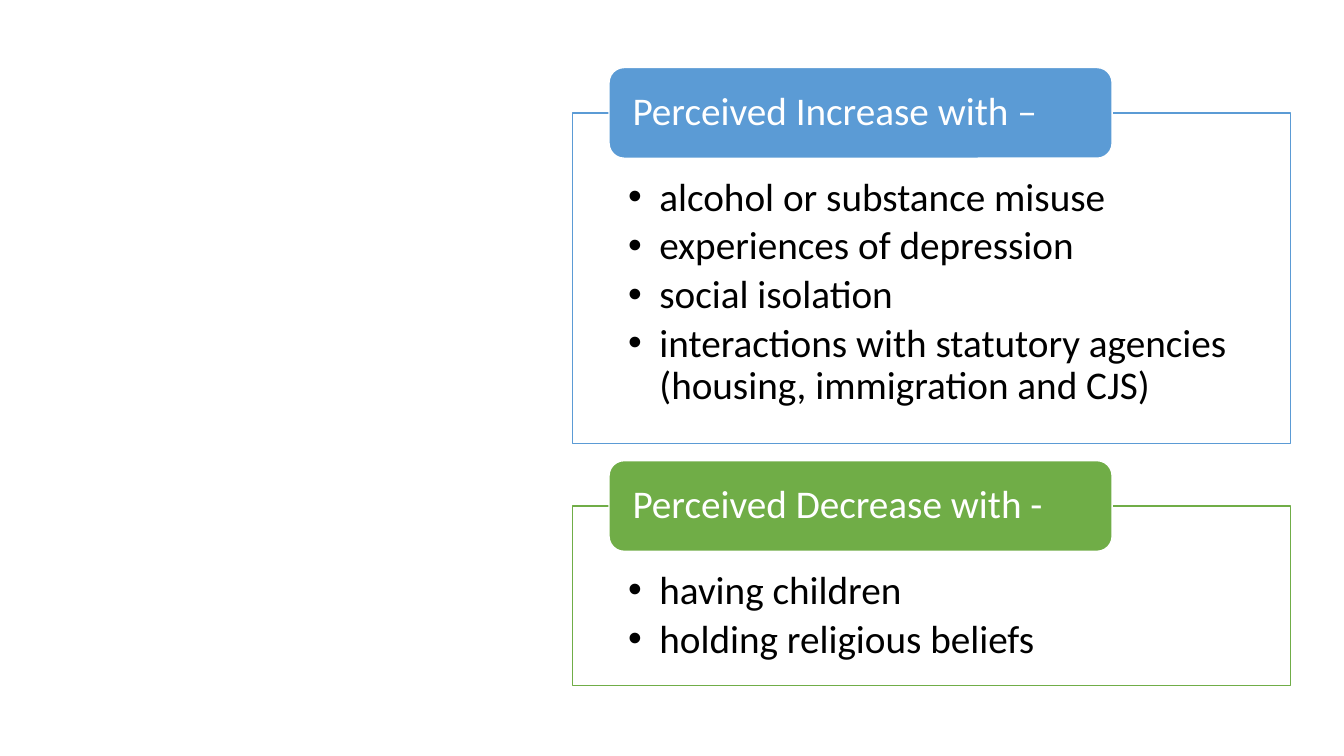
from lxml import etree
from pptx import Presentation
from pptx.dml.color import RGBColor
from pptx.enum.shapes import MSO_SHAPE
from pptx.enum.text import MSO_ANCHOR, MSO_AUTO_SIZE, PP_ALIGN
from pptx.oxml.ns import qn
from pptx.util import Inches, Pt

ROUNDED = MSO_SHAPE.ROUNDED_RECTANGLE
TOP, MIDDLE = MSO_ANCHOR.TOP, MSO_ANCHOR.MIDDLE
LEFT = PP_ALIGN.LEFT
NO_FIT = MSO_AUTO_SIZE.NONE

COLORS = {"increase": "5B9BD5", "decrease": "70AD47", "paper": "FFFFFF", "ink": "000000"}
PANEL_LEFT, PANEL_WIDTH = 5.68, 7.12
HEADING_LEFT, HEADING_WIDTH, HEADING_HEIGHT = 6.04, 4.99, 0.9
HANGING_INDENT = Inches(0.31)

GROUPS = [
    ("increase", 1.12, 3.28, "Perceived Increase with –", [
        "alcohol or substance misuse",
        "experiences of depression",
        "social isolation",
        "interactions with statutory agencies (housing, immigration and CJS)",
    ]),
    ("decrease", 5.02, 1.78, "Perceived Decrease with -", [
        "having children",
        "holding religious beliefs",
    ]),
]


def paint(box, fill, line):
    box.fill.solid()
    box.fill.fore_color.rgb = RGBColor.from_string(COLORS[fill])
    box.line.color.rgb = RGBColor.from_string(COLORS[line])
    box.line.width = Pt(1)


def write(frame, lines, color, insets, anchor, bulleted):
    frame.word_wrap = True
    frame.auto_size = NO_FIT
    frame.vertical_anchor = anchor
    frame.margin_left = frame.margin_right = Inches(insets[0])
    frame.margin_top, frame.margin_bottom = Inches(insets[1]), Inches(insets[2])
    frame.text = "\n".join(lines)
    for paragraph in frame.paragraphs:
        paragraph.alignment = LEFT
        paragraph.line_spacing = 0.9
        paragraph.space_before = Pt(0)
        paragraph.space_after = Pt(4.5 if bulleted else 0)
        if bulleted:
            properties = paragraph._p.get_or_add_pPr()
            properties.set("marL", str(HANGING_INDENT))
            properties.set("indent", str(-HANGING_INDENT))
            etree.SubElement(properties, qn("a:buFont")).set("typeface", "Arial")
            etree.SubElement(properties, qn("a:buChar")).set("char", "•")
        paragraph.font.name = "Calibri"
        paragraph.font.size = Pt(28)
        paragraph.font.color.rgb = RGBColor.from_string(COLORS[color])


presentation = Presentation()
presentation.slide_width = Inches(13.33)
presentation.slide_height = Inches(7.5)
slide = presentation.slides.add_slide(presentation.slide_layouts[3])
title = slide.shapes.title
title.element.getparent().remove(title.element)

for factors, (accent, top, height, heading_text, items) in zip(list(slide.placeholders), GROUPS):
    factors.left, factors.top = Inches(PANEL_LEFT), Inches(top)
    factors.width, factors.height = Inches(PANEL_WIDTH), Inches(height)
    paint(factors, "paper", accent)
    write(factors.text_frame, items, "ink", (0.55, 0.64, 0.22), TOP, True)

    heading = slide.shapes.add_shape(
        ROUNDED, Inches(HEADING_LEFT), Inches(top - HEADING_HEIGHT / 2),
        Inches(HEADING_WIDTH), Inches(HEADING_HEIGHT))
    heading.shadow.inherit = False
    paint(heading, accent, "paper")
    write(heading.text_frame, [heading_text], "paper", (0.19, 0, 0), MIDDLE, False)

presentation.save("out.pptx")
